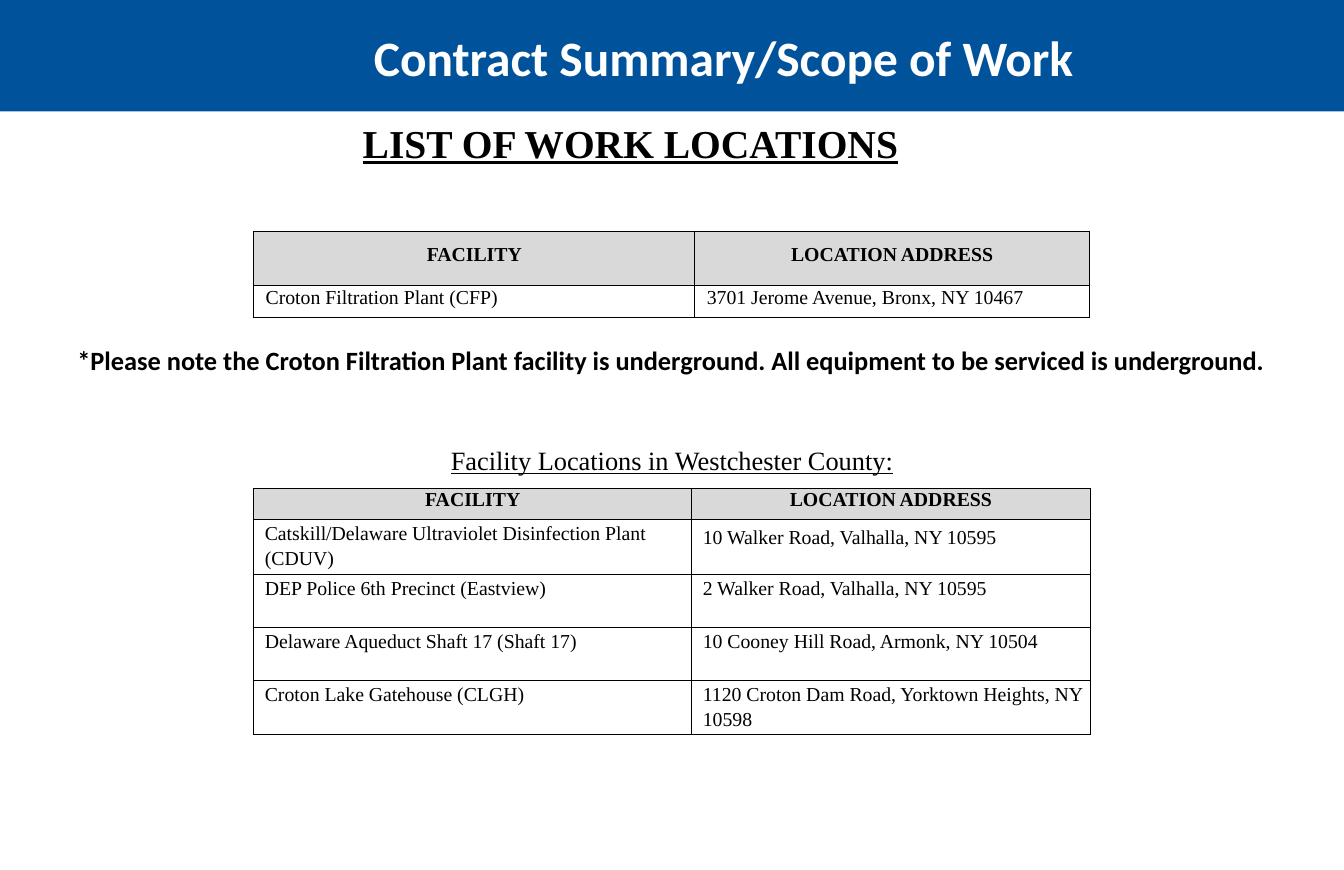
from lxml.etree import SubElement
from pptx import Presentation
from pptx.dml.color import RGBColor
from pptx.enum.shapes import MSO_SHAPE
from pptx.enum.text import MSO_ANCHOR, MSO_AUTO_SIZE, PP_ALIGN
from pptx.oxml.ns import qn
from pptx.util import Inches, Pt

SERIF = "Times New Roman"
SANS = "Calibri"
BLACK = "000000"
CROTON_ROWS = [("Croton Filtration Plant (CFP)", "3701 Jerome Avenue, Bronx, NY 10467")]
WESTCHESTER_ROWS = [
    ("Catskill/Delaware Ultraviolet Disinfection Plant (CDUV)", "10 Walker Road, Valhalla, NY 10595"),
    ("DEP Police 6th Precinct (Eastview)", "2 Walker Road, Valhalla, NY 10595"),
    ("Delaware Aqueduct Shaft 17 (Shaft 17)", "10 Cooney Hill Road, Armonk, NY 10504"),
    ("Croton Lake Gatehouse (CLGH)", "1120 Croton Dam Road, Yorktown Heights, NY 10598"),
]


def color(value):
    """Turn a hex string into a colour."""
    return RGBColor.from_string(value)


def write_text(frame, text, size=18, font=SERIF, fill=BLACK, bold=False,
               underline=False, align=PP_ALIGN.LEFT, spacing=1.0):
    """Write one formatted paragraph into a text frame."""
    para = frame.paragraphs[0]
    para.alignment = align
    para.line_spacing = spacing
    span = para.add_run()
    span.text = text
    span.font.size = Pt(size)
    span.font.name = font
    span.font.bold = bold
    span.font.underline = underline
    span.font.color.rgb = color(fill)


def add_text(page, left, top, width, height, text, **style):
    """Add a wrapping text box with one paragraph."""
    box = page.shapes.add_textbox(Inches(left), Inches(top), Inches(width), Inches(height))
    box.text_frame.word_wrap = True
    box.text_frame.auto_size = MSO_AUTO_SIZE.SHAPE_TO_FIT_TEXT
    write_text(box.text_frame, text, **style)


def add_banner(page, left, top, width, height):
    """Draw the blue band and set the slide title on it."""
    band = page.shapes.add_shape(MSO_SHAPE.RECTANGLE, Inches(left), Inches(top),
                                 Inches(width), Inches(height))
    band.shadow.inherit = False
    band.fill.solid()
    band.fill.fore_color.rgb = color("00529B")
    band.line.fill.background()
    title = page.shapes.title
    title._element.addprevious(band._element)
    title.left, title.top = Inches(left + 2.78), Inches(top + 0.29)
    title.width, title.height = Inches(12.75), Inches(0.86)
    frame = title.text_frame
    frame.word_wrap = True
    frame.auto_size = MSO_AUTO_SIZE.SHAPE_TO_FIT_TEXT
    frame.vertical_anchor = MSO_ANCHOR.TOP
    write_text(frame, "Contract Summary/Scope of Work", size=45, font=SANS,
               fill="FFFFFF", bold=True, align=PP_ALIGN.CENTER)


def add_borders(cell):
    """Give a cell a thin black line on every side."""
    properties = cell._tc.get_or_add_tcPr()
    for side in ("a:lnL", "a:lnR", "a:lnT", "a:lnB"):
        line = SubElement(properties, qn(side), w=str(Pt(1)))
        paint = SubElement(line, qn("a:solidFill"))
        SubElement(paint, qn("a:srgbClr"), val=BLACK)


def add_facility_table(page, left, top, widths, heights, rows, inset, anchor, spacing):
    """Add a table of facilities and addresses under a grey header row."""
    table = page.shapes.add_table(len(heights), len(widths), Inches(left), Inches(top),
                                  Inches(sum(widths)), Inches(sum(heights))).table
    table.first_row = table.horz_banding = False
    for column, width in zip(table.columns, widths):
        column.width = Inches(width)
    for row, height in zip(table.rows, heights):
        row.height = Inches(height)
    for i, texts in enumerate([("FACILITY", "LOCATION ADDRESS"), *rows]):
        header = i == 0
        for j, text in enumerate(texts):
            cell = table.cell(i, j)
            add_borders(cell)
            cell.margin_top = cell.margin_bottom = 0
            cell.margin_right = Inches(inset)
            cell.margin_left = Inches(inset if header else inset + 0.07)
            cell.vertical_anchor = MSO_ANCHOR.MIDDLE if header else anchor
            if header:
                cell.fill.solid()
                cell.fill.fore_color.rgb = color("D9D9D9")
            else:
                cell.fill.background()
            write_text(cell.text_frame, text, bold=header,
                       align=PP_ALIGN.CENTER if header else PP_ALIGN.LEFT,
                       spacing=Pt(13.4) if header else spacing)
    return table


def add_croton_section(page, left, top):
    """Place the heading, the Croton table and the note below it."""
    add_text(page, left + 1.28, top, 8, 0.7, "LIST OF WORK LOCATIONS",
             size=36, bold=True, underline=True)
    add_facility_table(page, left, top + 1.48, [5.58, 4.99], [0.68, 0.4], CROTON_ROWS,
                       0.08, MSO_ANCHOR.MIDDLE, Pt(13.3))
    add_text(page, left - 2.33, top + 2.85, 15.23, 0.5,
             "*Please note the Croton Filtration Plant facility is underground. "
             "All equipment to be serviced is underground.", size=24, font=SANS, bold=True)


def add_westchester_section(page, left, top):
    """Place the Westchester caption and its table."""
    add_text(page, left + 1.01, top, 8.56, 0.5, "Facility Locations in Westchester County:",
             size=24, underline=True, align=PP_ALIGN.CENTER, spacing=1.07)
    table = add_facility_table(page, left, top + 0.63, [5.54, 5.04], [0.4] + [0.67] * 4,
                               WESTCHESTER_ROWS, 0.07, MSO_ANCHOR.TOP, 1.15)
    walker_road = table.cell(1, 1)
    walker_road.margin_top = Inches(0.18)
    walker_road.text_frame.paragraphs[0].line_spacing = Pt(13.3)


def main():
    """Build the one-slide deck."""
    deck = Presentation()
    deck.slide_width, deck.slide_height = Inches(17), Inches(11)
    page = deck.slides.add_slide(deck.slide_layouts[5])
    add_banner(page, 0, 0, 17, 1.41)
    add_croton_section(page, 3.21, 1.45)
    add_westchester_section(page, 3.21, 5.54)
    deck.save("out.pptx")


if __name__ == "__main__":
    main()
